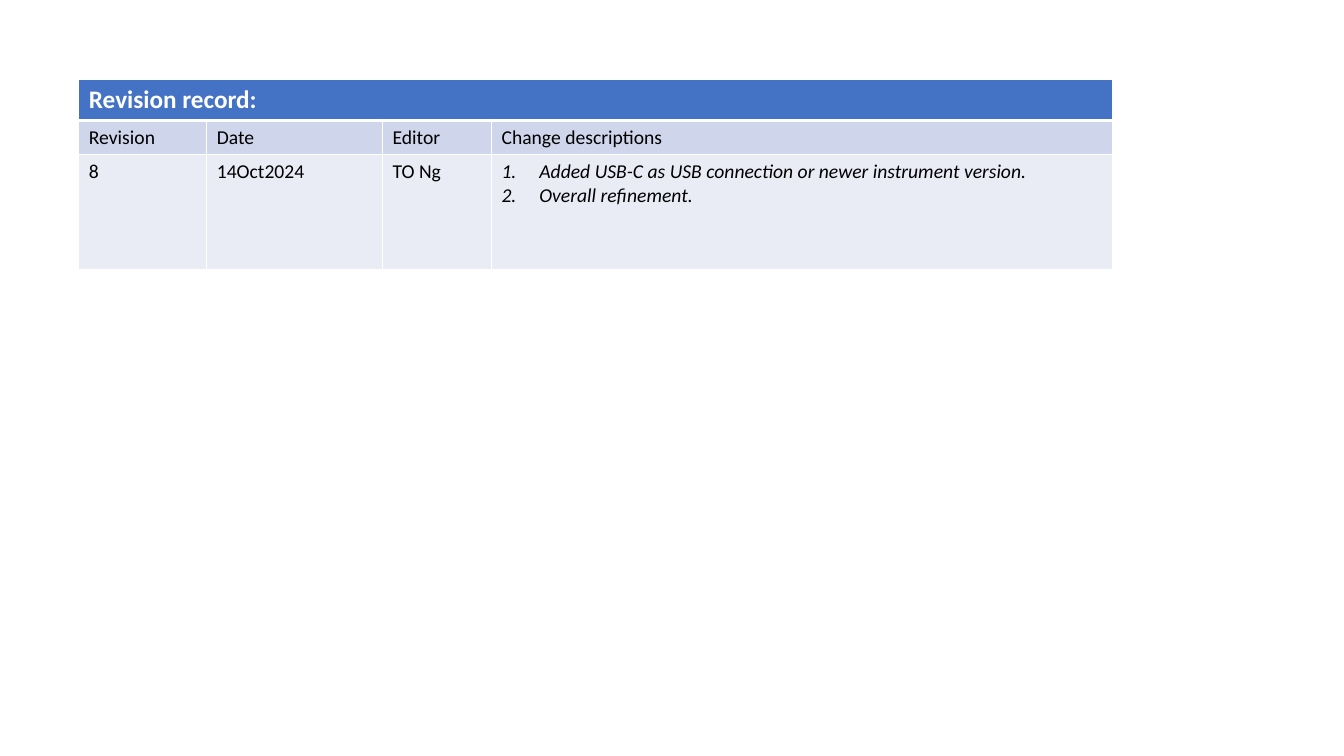
from lxml.etree import SubElement
from pptx import Presentation
from pptx.dml.color import RGBColor
from pptx.oxml.ns import qn
from pptx.util import Pt

COLUMN_WIDTHS = [91.4, 125.6, 77.8, 444]
ROW_HEIGHTS = [29, 24.4, 82]
ROW_FILLS = ["4472C4", "CFD5EA", "E9EBF5"]
HEADINGS = ["Revision", "Date", "Editor", "Change descriptions"]
ENTRY = ["8", "14Oct2024", "TO Ng"]
CHANGES = [
    "Added USB-C as USB connection or newer instrument version.",
    "Overall refinement.",
]


def color(value):
    """Return the colour for a hex string."""
    return RGBColor.from_string(value)


def write(para, text, size=14, fill="000000", bold=False, italic=False, numbered=False):
    """Write formatted text into a paragraph."""
    if numbered:
        properties = para._p.get_or_add_pPr()
        properties.set("marL", str(Pt(27)))
        properties.set("indent", str(Pt(-27)))
        SubElement(properties, qn("a:buFont"), typeface="+mj-lt")
        SubElement(properties, qn("a:buAutoNum"), type="arabicPeriod")
    span = para.add_run()
    span.text = text
    span.font.name = "Calibri"
    span.font.size = Pt(size)
    span.font.bold = bold
    span.font.italic = italic
    span.font.color.rgb = color(fill)


def style_cell(cell, fill, top=1, bottom=1):
    """Give a cell its fill and white borders."""
    properties = cell._tc.get_or_add_tcPr()
    for side, width in {"L": 1, "R": 1, "T": top, "B": bottom}.items():
        line = SubElement(properties, qn(f"a:ln{side}"), w=str(Pt(width)))
        paint = SubElement(line, qn("a:solidFill"))
        SubElement(paint, qn("a:srgbClr"), val="FFFFFF")
    cell.fill.solid()
    cell.fill.fore_color.rgb = color(fill)


def add_revision_table(page, left, top):
    """Place the revision record with its corner at the given point."""
    frame = page.shapes.add_table(
        len(ROW_HEIGHTS), len(COLUMN_WIDTHS), Pt(left), Pt(top),
        Pt(sum(COLUMN_WIDTHS)), Pt(sum(ROW_HEIGHTS)))
    table = frame.table
    for column, width in zip(table.columns, COLUMN_WIDTHS):
        column.width = Pt(width)
    for index, (row, height) in enumerate(zip(table.rows, ROW_HEIGHTS)):
        row.height = Pt(height)
        for cell in row.cells:
            style_cell(cell, ROW_FILLS[index], top=3 if index == 1 else 1,
                       bottom=3 if index == 0 else 1)

    title = table.cell(0, 0)
    title.merge(table.cell(0, len(COLUMN_WIDTHS) - 1))
    write(title.text_frame.paragraphs[0], "Revision record:", size=18, fill="FFFFFF", bold=True)
    for row, texts in enumerate([HEADINGS, ENTRY], start=1):
        for column, text in enumerate(texts):
            write(table.cell(row, column).text_frame.paragraphs[0], text)

    changes = table.cell(2, 3).text_frame
    for index, text in enumerate(CHANGES):
        para = changes.add_paragraph() if index else changes.paragraphs[0]
        write(para, text, italic=True, numbered=True)


def main():
    """Build and save the deck."""
    deck = Presentation()
    deck.slide_width, deck.slide_height = Pt(960), Pt(540)
    page = deck.slides.add_slide(deck.slide_layouts[6])
    add_revision_table(page, left=56.3, top=56.9)
    deck.save("out.pptx")


if __name__ == "__main__":
    main()
